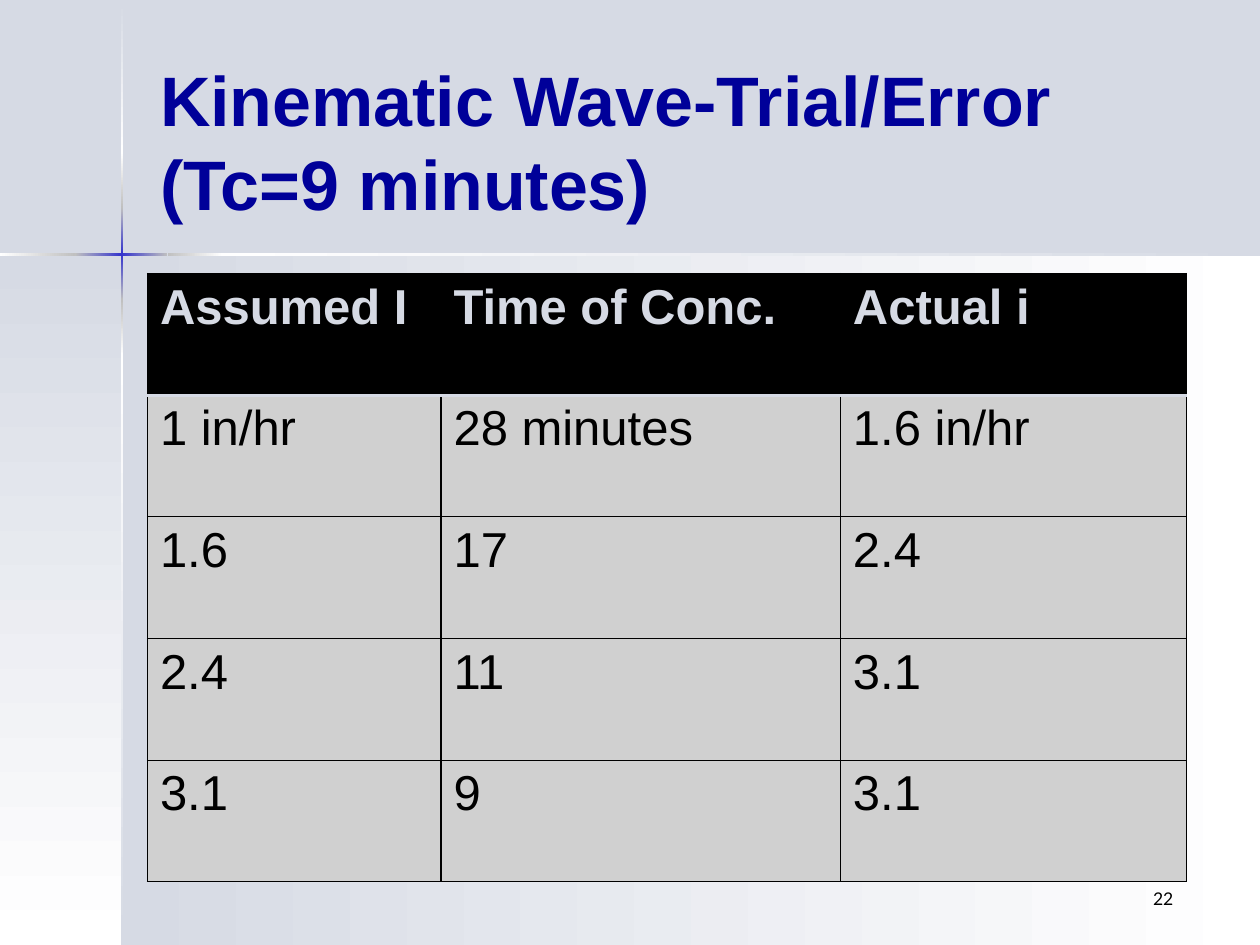
from copy import deepcopy
from lxml.etree import SubElement as Sub
from pptx import Presentation
from pptx.dml.color import RGBColor as RGB
from pptx.enum.shapes import MSO_SHAPE as Shape
from pptx.enum.text import MSO_ANCHOR as Anchor, MSO_AUTO_SIZE as Auto, PP_ALIGN as Align
from pptx.oxml.ns import qn
from pptx.util import Inches, Pt

HUES = {"pale": "D6DAE4", "white": "FFFFFF", "gray": "C0C0C0", "blue": "3333CC",
        "navy": "000099", "black": "000000", "cell": "D0D0D0"}
TITLE = "Kinematic Wave-Trial/Error \v(Tc=9 minutes)"
NUMBER = "22"
ROWS = [
    ("Assumed I", "Time of Conc.", "Actual i"),
    ("1 in/hr", "28 minutes", "1.6 in/hr"),
    ("1.6", "17", "2.4"),
    ("2.4", "11", "3.1"),
    ("3.1", "9", "3.1"),
]
WIDTHS = (2.33, 3.17, 2.75)
LEFT, TOP, HIGH = 1.17, 2.17, 4.83

# Left, top, width, height, gradient colours, runs downward
PANELS = [
    (0.97, 2.02, 9.03, 5.48, ("pale", "white"), False),
    (0, 2.02, 0.97, 5.48, ("pale", "white"), True),
]
# Start, end, gradient colours along each thin rule
DOWN = [
    (0.01, 1.21, ("pale", "white")),
    (2.82, 7.5, ("white", "pale")),
    (2.38, 2.82, ("gray", "white")),
    (1.21, 1.65, ("white", "gray")),
    (1.65, 2.38, ("gray", "blue", "gray")),
]
ACROSS = [
    (1.77, 10, ("white", "pale")),
    (0, 0.6, ("white", "gray")),
    (1.33, 1.77, ("gray", "white")),
    (0.6, 1.33, ("gray", "blue", "gray")),
]
RULE_X, RULE_Y, THICK = 0.96, 2.01, 0.02


def hue(name):
    return RGB.from_string(HUES[name])


def style(para, color, **form):
    for key, val in form.items():
        setattr(para.font, key, val)
    para.font.color.rgb = hue(color)


def band(slide, x, y, w, h, names, down):
    box = slide.shapes.add_shape(Shape.RECTANGLE, *map(Inches, (x, y, w, h)))
    box.shadow.inherit = False
    box.line.fill.background()
    box.fill.gradient()
    box.fill.gradient_angle = 270 if down else 0
    if len(names) == 3:
        first = box._element.spPr.find(".//" + qn("a:gs"))
        first.addnext(deepcopy(first))
    stops = box.fill.gradient_stops
    for i, (stop, name) in enumerate(zip(stops, names)):
        stop.position = i / (len(names) - 1)
        stop.color.rgb = hue(name)


def edge(cell, side, color, width):
    line = Sub(cell._tc.get_or_add_tcPr(), qn("a:ln" + side), w=str(Pt(width)))
    Sub(Sub(line, qn("a:solidFill")), qn("a:srgbClr"), val=HUES[color])


def fill_cell(cell, text, row):
    head = row == 0
    pale = {0: "B", 1: "T"}.get(row)
    for side in "LRTB":
        edge(cell, side, *(("pale", 2) if side == pale else ("black", 0.75)))
    cell.fill.solid()
    cell.fill.fore_color.rgb = hue("black" if head else "cell")
    cell.text = text
    style(cell.text_frame.paragraphs[0], "pale" if head else "black",
          name="Arial", size=Pt(28), bold=head)


def add_grid(slide):
    frame = slide.shapes.add_table(len(ROWS), len(WIDTHS), Inches(LEFT), Inches(TOP),
                                   Inches(sum(WIDTHS)), Inches(HIGH))
    grid = frame.table
    for col, wide in zip(grid.columns, WIDTHS):
        col.width = Inches(wide)
    for r, row in enumerate(ROWS):
        grid.rows[r].height = Inches(HIGH / len(ROWS))
        for c, text in enumerate(row):
            fill_cell(grid.cell(r, c), text, r)


def add_title(slide):
    title = slide.shapes.title
    title.left, title.top, title.width, title.height = map(Inches, (LEFT, 0.33, 8.25, 1.57))
    frame = title.text_frame
    frame.text = TITLE
    frame.auto_size = Auto.NONE
    frame.vertical_anchor = Anchor.MIDDLE
    para = frame.paragraphs[0]
    para.alignment = Align.LEFT
    style(para, "navy", name="Arial", size=Pt(40), bold=True)


def add_number(slide):
    """Put the slide number just under the table, flush with its right side."""
    box = slide.shapes.add_textbox(*map(Inches, (7.33, TOP + HIGH, 2.08, 0.4)))
    box.text_frame.word_wrap = True
    para = box.text_frame.paragraphs[0]
    para.text = NUMBER
    para.alignment = Align.RIGHT
    style(para, "black", name="Lato", size=Pt(10))


def main():
    deck = Presentation()
    deck.slide_width, deck.slide_height = Inches(10), Inches(7.5)
    slide = deck.slides.add_slide(deck.slide_layouts[5])
    back = slide.background.fill
    back.solid()
    back.fore_color.rgb = hue("pale")
    for panel in PANELS:
        band(slide, *panel)
    for start, end, names in DOWN:
        band(slide, RULE_X, start, THICK, end - start, names, True)
    for start, end, names in ACROSS:
        band(slide, start, RULE_Y, end - start, THICK, names, False)
    add_number(slide)
    add_title(slide)
    add_grid(slide)
    deck.save("out.pptx")


if __name__ == "__main__":
    main()
